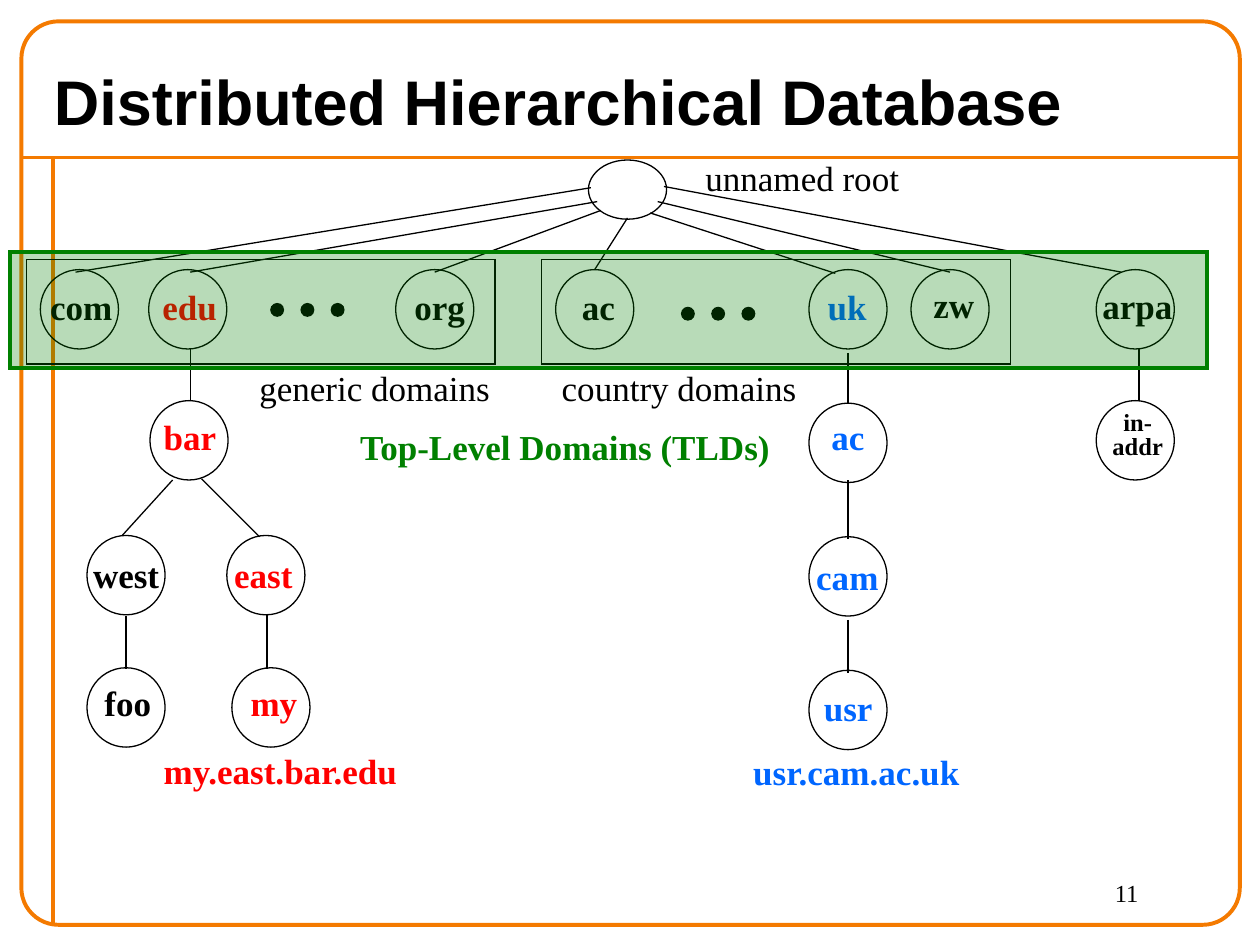
from lxml.etree import SubElement
from pptx import Presentation
from pptx.dml.color import RGBColor
from pptx.enum.shapes import MSO_CONNECTOR as Link, MSO_SHAPE as Kind
from pptx.enum.text import MSO_ANCHOR as Anchor, MSO_AUTO_SIZE as Fit, PP_ALIGN as Align
from pptx.oxml.ns import qn
from pptx.util import Inches, Pt

BLACK, RED, BLUE, GREEN, ORANGE = "000000", "FF0000", "0066FF", "008000", "F47A00"
SERIF = "Times New Roman"
NODE = 0.62, 0.63
SLACK = 0.04


def color(code):
    return RGBColor.from_string(code)


class Board:
    """Draws the elements of the domain tree on one slide."""

    def __init__(self, slide):
        self.slide = slide
        self.shapes = slide.shapes

    def shape(self, kind, x, y, w, h, line=BLACK, width=0.75, fill=None, alpha=None, into=None):
        item = (into or self.shapes).add_shape(kind, *map(Inches, (x, y, w, h)))
        item.shadow.inherit = False
        item.line.color.rgb = color(line)
        item.line.width = Pt(width)
        props = item._element.spPr
        SubElement(props.find(qn("a:ln")), qn("a:miter"), lim="800000")
        if fill:
            item.fill.solid()
            item.fill.fore_color.rgb = color(fill)
        else:
            item.fill.background()
        if alpha:
            tone = props.find(qn("a:solidFill"))[0]
            SubElement(tone, qn("a:alpha"), val=str(alpha * 1000))
        return item

    def line(self, x1, y1, x2, y2, tone=BLACK, width=0.75):
        item = self.shapes.add_connector(Link.STRAIGHT, *map(Inches, (x1, y1, x2, y2)))
        item.line.color.rgb = color(tone)
        item.line.width = Pt(width)
        SubElement(item._element.spPr, qn("a:effectLst"))

    def text(self, words, x, y, w, h=0.43, tone=BLACK, size=20, bold=True, face=SERIF,
             align=Align.LEFT, anchor=Anchor.TOP, wrap=False, space=None):
        frame = self.shapes.add_textbox(*map(Inches, (x, y, w, h))).text_frame
        frame.word_wrap = wrap
        frame.auto_size = Fit.NONE if wrap else Fit.SHAPE_TO_FIT_TEXT
        frame.vertical_anchor = anchor
        frame.text = words
        for para in frame.paragraphs:
            para.alignment = align
            para.line_spacing = space
            para.font.name = face
            para.font.size = Pt(size)
            para.font.bold = bold
            para.font.color.rgb = color(tone)

    def node(self, label, x, y, left, top, w, tone=BLACK, **style):
        self.shape(Kind.OVAL, x, y, *NODE)
        self.text(label, left, top, w + SLACK, tone=tone, **style)

    def dots(self, x, y):
        group = self.shapes.add_group_shape()
        for i in range(3):
            self.shape(Kind.OVAL, x + 0.24 * i, y, 0.1, 0.1, fill=BLACK, into=group.shapes)


def main():
    deck = Presentation()
    deck.slide_width, deck.slide_height = Inches(10), Inches(7.5)
    board = Board(deck.slides.add_slide(deck.slide_layouts[6]))

    board.line(0.17, 1.25, 9.83, 1.25, ORANGE, 2.25)
    board.line(0.42, 1.25, 0.42, 7.33, ORANGE, 2.25)
    frame = board.shape(Kind.ROUNDED_RECTANGLE, 0.17, 0.17, 9.67, 7.17, ORANGE, 2.25)
    frame.adjustments[0] = 0.041
    board.text("11", 8.75, 6.92, 1, size=14, bold=False, wrap=True)
    board.text("Distributed Hierarchical Database", 0.33, 0.42, 9.5, 0.75, size=36,
               face="Arial", anchor=Anchor.MIDDLE, wrap=True)

    board.shape(Kind.OVAL, 4.67, 1.27, 0.62, 0.47)
    for x in (0.21, 4.3):
        board.shape(Kind.RECTANGLE, x, 2.06, 3.72, 0.83)
    board.dots(2.15, 2.41)
    board.dots(5.41, 2.44)

    for node in (
        ("com", 0.32, 2.14, 0.3, 2.22, 0.69),
        ("edu", 1.18, 2.14, 1.19, 2.22, 0.63, RED),
        ("org", 3.14, 2.14, 3.19, 2.22, 0.6),
        ("ac", 4.41, 2.14, 4.52, 2.22, 0.46),
        ("uk", 6.42, 2.14, 6.47, 2.22, 0.51, BLUE),
        ("zw", 7.23, 2.14, 7.31, 2.2, 0.53),
        ("arpa", 8.7, 2.14, 8.65, 2.21, 0.76),
        ("bar", 1.19, 3.18, 1.2, 3.25, 0.62, RED),
        ("west", 0.69, 4.25, 0.64, 4.34, 0.73),
        ("east", 1.8, 4.25, 1.76, 4.34, 0.66, RED),
        ("foo", 0.69, 5.3, 0.73, 5.36, 0.57),
        ("my", 1.84, 5.3, 1.89, 5.36, 0.57, RED),
        ("ac", 6.42, 3.2, 6.5, 3.25, 0.46, BLUE),
        ("cam", 6.42, 4.26, 6.38, 4.36, 0.69, BLUE),
        ("usr", 6.42, 5.32, 6.44, 5.4, 0.59, BLUE),
    ):
        board.node(*node)
    board.node("in-\naddr", 8.7, 3.18, 8.71, 3.23, 0.6, h=0.47, size=14,
               align=Align.CENTER, space=0.8)

    for ends in (
        (4.69, 1.49, 0.6, 2.16), (4.74, 1.6, 1.51, 2.16), (4.77, 1.67, 3.45, 2.16),
        (4.98, 1.73, 4.72, 2.14), (5.27, 1.48, 8.9, 2.16), (5.22, 1.6, 7.54, 2.16),
        (5.16, 1.69, 6.63, 2.17), (1.37, 3.81, 0.97, 4.25), (1.6, 3.8, 2.06, 4.26),
    ):
        board.line(*ends)
    for x, top, end in (
        (1.51, 2.77, 3.18), (1, 4.89, 5.31), (2.12, 4.87, 5.31), (6.73, 2.8, 3.2),
        (6.73, 3.81, 4.28), (6.73, 4.92, 5.34), (9.04, 2.76, 3.18),
    ):
        board.line(x, top, x, end)

    for words, x, y, w in (
        ("unnamed root", 5.5, 1.19, 1.74),
        ("generic domains", 1.96, 2.86, 2.03),
        ("country domains", 4.36, 2.86, 2.06),
    ):
        board.text(words, x, y, w, bold=False)
    board.text("my.east.bar.edu", 1.2, 5.9, 2.09, tone=RED)
    board.text("usr.cam.ac.uk", 5.88, 5.91, 1.86, tone=BLUE)
    board.shape(Kind.RECTANGLE, 0.08, 2, 9.5, 0.92, GREEN, 2, fill=GREEN, alpha=28)
    board.text("Top-Level Domains (TLDs)", 2.75, 3.33, 3.47, tone=GREEN,
               align=Align.CENTER, anchor=Anchor.MIDDLE)
    deck.save("out.pptx")


if __name__ == "__main__":
    main()
